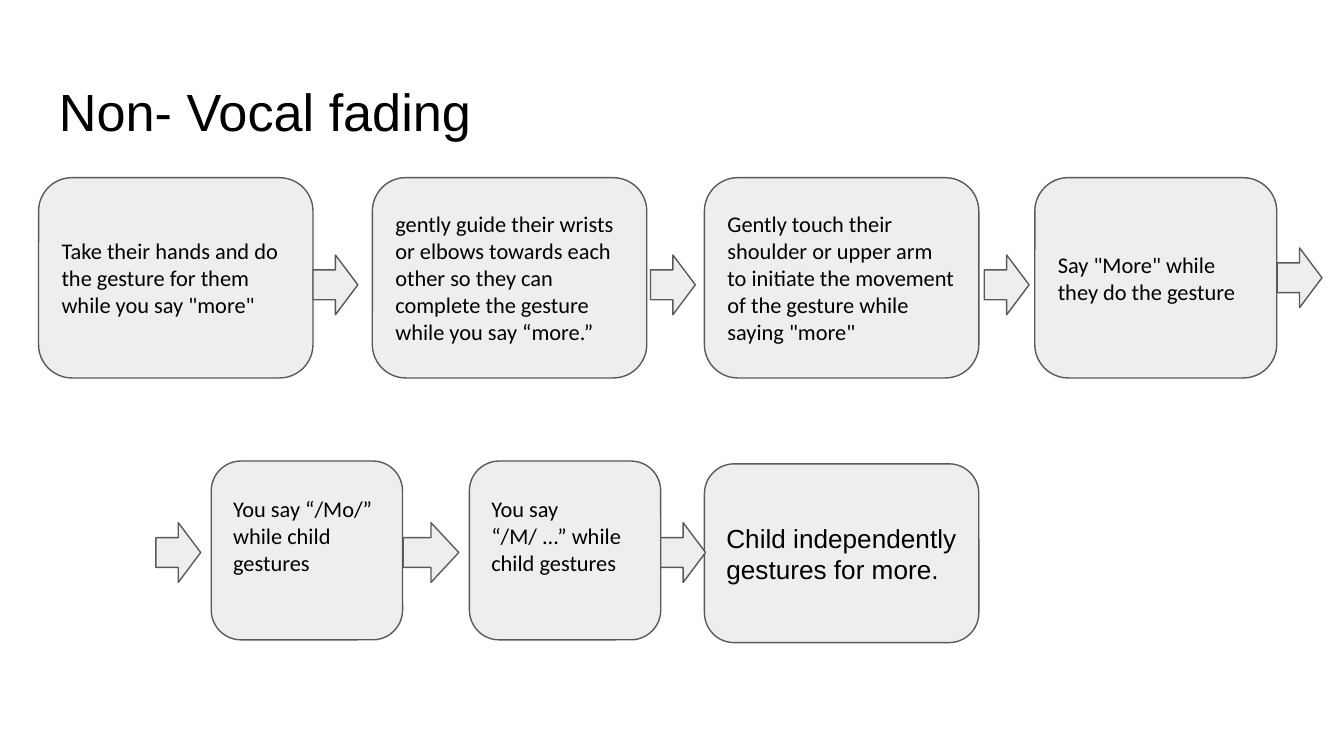
"""Builds the non-vocal fading slide: prompt steps joined by block arrows."""
from pptx import Presentation
from pptx.dml.color import RGBColor
from pptx.enum.shapes import MSO_SHAPE
from pptx.enum.text import MSO_ANCHOR, PP_ALIGN
from pptx.util import Pt

ROUNDED = MSO_SHAPE.ROUNDED_RECTANGLE
ARROW = MSO_SHAPE.RIGHT_ARROW
MIDDLE = MSO_ANCHOR.MIDDLE
TOP = MSO_ANCHOR.TOP
LEFT = PP_ALIGN.LEFT

COLORS = {"fill": "EEEEEE", "line": "595959", "text": "000000"}
INSET = 7.2
RAISED = 23.3
WIDE, MEDIUM, NARROW = 147, 129.6, 102.5
UPPER = (95.2, 107.3)
LOWER = (247, 95.8)
LAST = (248.5, 95.8)

STEPS = [
    (20.7, WIDE, UPPER, INSET, "Calibri", 12,
     'Take their hands and do the gesture for them while you say "more"'),
    (199.5, WIDE, UPPER, INSET, "Calibri", 12,
     "gently guide their wrists or elbows towards each other so they can "
     "complete the gesture while you say “more.”"),
    (377.4, WIDE, UPPER, INSET, "Calibri", 12,
     "Gently touch their shoulder or upper arm to initiate the movement "
     'of the gesture while saying "more"'),
    (554.4, MEDIUM, UPPER, INSET, "Calibri", 12,
     'Say "More" while they do the gesture'),
    (113.2, NARROW, LOWER, RAISED, "Calibri", 12,
     "You say “/Mo/” while child gestures"),
    (251.5, NARROW, LOWER, RAISED, "Calibri", 12,
     "You say “/M/ ...” while child gestures"),
    (377.4, WIDE, LAST, INSET, "Arial", 14,
     "Child independently gestures for more."),
]

ARROWS = [
    (167.7, 136.6, 24), (348.5, 136.6, 24), (527.3, 136.6, 24),
    (684.2, 132.8, 24), (83.5, 280, 24), (216, 280, 29.8), (354, 280, 24),
]


def rgb(name):
    """Return the named colour."""
    return RGBColor.from_string(COLORS[name])


def write(sp, text, font, size, anchor, bottom=INSET):
    """Put left-aligned wrapped text into a shape."""
    tf = sp.text_frame
    tf.text = text
    tf.word_wrap = True
    tf.vertical_anchor = anchor
    tf.margin_left = tf.margin_right = tf.margin_top = Pt(INSET)
    tf.margin_bottom = Pt(bottom)
    p = tf.paragraphs[0]
    p.alignment = LEFT
    r = p.runs[0]
    r.font.name = font
    r.font.size = Pt(size)
    r.font.color.rgb = rgb("text")


def add_block(s, kind, x, y, w, h):
    """Add a grey outlined preset shape."""
    sp = s.shapes.add_shape(kind, Pt(x), Pt(y), Pt(w), Pt(h))
    sp.shadow.inherit = False
    sp.fill.solid()
    sp.fill.fore_color.rgb = rgb("fill")
    sp.line.color.rgb = rgb("line")
    sp.line.width = Pt(0.75)
    return sp


def add_title(s, text):
    """Add the slide heading."""
    sp = s.shapes.add_textbox(Pt(24.5), Pt(35), Pt(671), Pt(45.4))
    write(sp, text, "Arial", 28, TOP)


def add_step(s, x, w, row, bottom, font, size, text):
    """Add a rounded box holding one step."""
    y, h = row
    sp = add_block(s, ROUNDED, x, y, w, h)
    write(sp, text, font, size, MIDDLE, bottom)


def main():
    """Build and save the slide."""
    prs = Presentation()
    prs.slide_width, prs.slide_height = Pt(720), Pt(405)
    s = prs.slides.add_slide(prs.slide_layouts[6])
    add_title(s, "Non- Vocal fading")
    for step in STEPS:
        add_step(s, *step)
    for x, y, w in ARROWS:
        add_block(s, ARROW, x, y, w, 32)
    prs.save("out.pptx")


if __name__ == "__main__":
    main()
